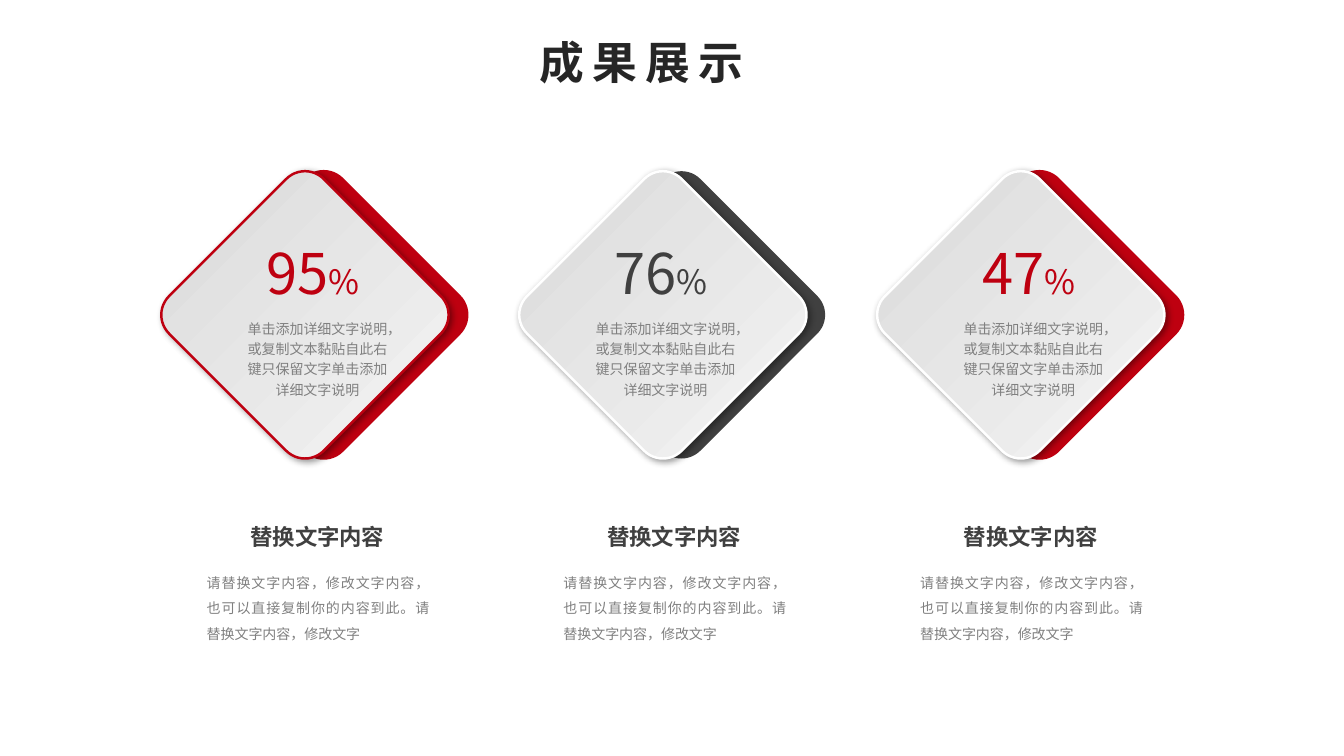
import pptx
import pptx.util
from pptx.dml.color import RGBColor
from pptx.enum.shapes import MSO_SHAPE
from pptx.enum.text import MSO_AUTO_SIZE, PP_ALIGN
from pptx.oxml import parse_xml
from pptx.oxml.ns import nsdecls
from pptx.util import Cm, Pt

RED = RGBColor(0xBE, 0x00, 0x10)
DARK = RGBColor(0x40, 0x40, 0x40)
GREY = RGBColor(0x80, 0x80, 0x80)
INK = RGBColor(0x26, 0x26, 0x26)
WHITE = RGBColor(0xFF, 0xFF, 0xFF)
FACE_START = RGBColor(0xD9, 0xD9, 0xD9)
FACE_END = RGBColor(0xF5, 0xF5, 0xF5)
FONT = "Noto Sans CJK SC"

TITLE = "成果展示"
DETAIL = "单击添加详细文字说明，或复制文本黏贴自此右键只保留文字单击添加详细文字说明"
HEADING = "替换文字内容"
CAPTION = "请替换文字内容，修改文字内容，也可以直接复制你的内容到此。请替换文字内容，修改文字"
# value, accent, back edge, face edge, left of the text on the card (cm)
RESULTS = [
    ("95", RED, RED, RED, 5.89),
    ("76", DARK, None, WHITE, 14.66),
    ("47", RED, RED, WHITE, 23.93),
]

CARD_LEFT, CARD_TOP, CARD_SIZE, CARD_PITCH = 4.93, 5.18, 5.51, 9.02
BACK_SHIFT = 0.47
CAPTION_LEFT, HEADING_LEFT, CAPTION_PITCH = 5.21, 5.64, 8.99


def add_text(slide, runs, box, color, align=PP_ALIGN.CENTER, bold=False,
             tracking=None, line_spacing=None, before=None, inset=True):
    """Add one paragraph; runs are (text, point size) pairs, box is in cm."""
    textbox = slide.shapes.add_textbox(*map(Cm, box))
    frame = textbox.text_frame
    frame.word_wrap = True
    frame.auto_size = MSO_AUTO_SIZE.SHAPE_TO_FIT_TEXT
    if not inset:
        frame.margin_left = frame.margin_right = 0
        frame.margin_top = frame.margin_bottom = 0
    paragraph = frame.paragraphs[0]
    paragraph.alignment = align
    if line_spacing:
        paragraph.line_spacing = line_spacing
    if before:
        paragraph.space_before = Pt(before)
    for text, size in runs:
        run = paragraph.add_run()
        run.text = text
        run.font.size = Pt(size)
        run.font.bold = bold
        run.font.color.rgb = color
        run.font.name = FONT
        properties = run.font._element
        properties.append(parse_xml(f'<a:ea {nsdecls("a")} typeface="{FONT}"/>'))
        if tracking:
            properties.set("spc", str(tracking * 100))


def add_diamond(group, left, edge):
    diamond = group.shapes.add_shape(
        MSO_SHAPE.ROUNDED_RECTANGLE,
        Cm(left), Cm(CARD_TOP), Cm(CARD_SIZE), Cm(CARD_SIZE))
    diamond.adjustments[0] = 0.121
    diamond.rotation = 45
    diamond.shadow.inherit = False
    if edge is None:
        diamond.line.fill.background()
    else:
        diamond.line.color.rgb = edge
        diamond.line.width = Pt(1.75)
    return diamond


def add_card(slide, left, accent, back_edge, face_edge):
    group = slide.shapes.add_group_shape()
    back = add_diamond(group, left + BACK_SHIFT, back_edge)
    back.fill.solid()
    back.fill.fore_color.rgb = accent

    face = add_diamond(group, left, face_edge)
    face.fill.gradient()
    face.fill.gradient_angle = 0
    for stop, color in zip(face.fill.gradient_stops, (FACE_START, FACE_END)):
        stop.color.rgb = color
    effects = face._element.spPr.find(pptx.oxml.ns.qn("a:effectLst"))
    effects.append(parse_xml(
        f'<a:outerShdw {nsdecls("a")} blurRad="{Pt(5)}" dist="{Pt(2)}" '
        'dir="2700000" algn="tl" rotWithShape="0"><a:srgbClr val="000000">'
        '<a:alpha val="40000"/></a:srgbClr></a:outerShdw>'))


def main():
    deck = pptx.Presentation()
    deck.slide_width, deck.slide_height = Cm(33.87), Cm(19.05)
    slide = deck.slides.add_slide(deck.slide_layouts[6])

    add_text(slide, [(TITLE, 32)], (13.34, 0.76, 6.6, 1.63), INK,
             align=PP_ALIGN.JUSTIFY, bold=True, tracking=6)

    for index, (value, accent, back_edge, face_edge, text_left) in enumerate(RESULTS):
        add_card(slide, CARD_LEFT + index * CARD_PITCH, accent, back_edge, face_edge)
        add_text(slide, [(value, 40), ("%", 24)], (text_left, 5.89, 4.01, 1.96), accent)
        add_text(slide, [(DETAIL, 10)], (text_left, 7.87, 4.22, 2.31), GREY,
                 line_spacing=1.2)
        shift = index * CAPTION_PITCH
        add_text(slide, [(HEADING, 16)], (HEADING_LEFT + shift, 13.18, 4.72, 0.69),
                 DARK, bold=True, before=7.5, inset=False)
        add_text(slide, [(CAPTION, 10)], (CAPTION_LEFT + shift, 14.27, 5.61, 1.85),
                 GREY, align=PP_ALIGN.JUSTIFY, line_spacing=1.5, before=7.5, inset=False)

    deck.save("out.pptx")


if __name__ == "__main__":
    main()
